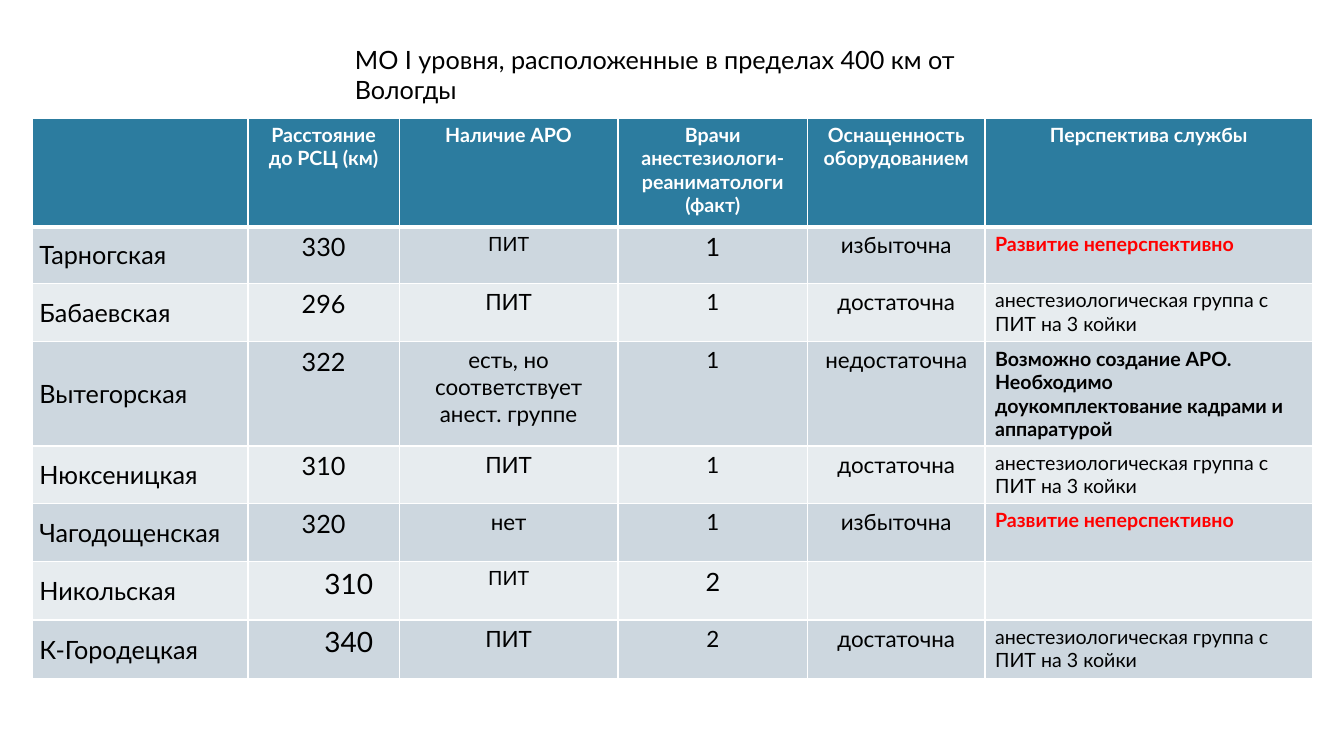
from dataclasses import dataclass

from lxml import etree
from pptx import Presentation
from pptx.dml.color import RGBColor
from pptx.enum.text import MSO_ANCHOR, MSO_AUTO_SIZE, PP_ALIGN
from pptx.oxml.ns import qn
from pptx.util import Inches, Pt

LEFT, CENTER = PP_ALIGN.LEFT, PP_ALIGN.CENTER
TOP, MIDDLE = MSO_ANCHOR.TOP, MSO_ANCHOR.MIDDLE
FIXED = MSO_AUTO_SIZE.NONE

TITLE = "МО I уровня, расположенные в пределах 400 км от Вологды"
HEADS = ["", "Расстояние до РСЦ (км)", "Наличие АРО",
         "Врачи анестезиологи-реаниматологи (факт)",
         "Оснащенность оборудованием", "Перспектива службы"]
GROUP = "анестезиологическая группа с ПИТ на 3 койки"
HOPELESS = "Развитие неперспективно"
UPGRADE = "Возможно создание АРО. Необходимо доукомплектование кадрами и аппаратурой"
ROWS = [
    ("Тарногская", "330", "ПИТ", "1", "избыточна", HOPELESS),
    ("Бабаевская", "296", "ПИТ", "1", "достаточна", GROUP),
    ("Вытегорская", "322", "есть, но соответствует анест. группе", "1",
     "недостаточна", UPGRADE),
    ("Нюксеницкая", "310", "ПИТ", "1", "достаточна", GROUP),
    ("Чагодощенская", "320", "нет", "1", "избыточна", HOPELESS),
    ("Никольская", "310", "ПИТ", "2", "", ""),
    ("К-Городецкая", "340", "ПИТ", "2", "достаточна", GROUP),
]
WIDTHS = [2.14, 1.5, 2.17, 1.88, 1.76, 3.25]
HEIGHTS = [1.08, 0.56, 0.58, 1.03, 0.56, 0.58, 0.58, 0.58]
SIZES = [18, 18, 16, 16, 16, 14]
SPECIAL = {(1, 2): 14, (1, 3): 18, (6, 2): 14, (6, 3): 18,
           (6, 1): 20, (7, 1): 20}
INDENTED = [(6, 1), (7, 1)]


@dataclass
class Theme:
    font: str = "Lato"
    head: str = "2C7C9F"
    bands: tuple = ("E7ECEF", "CDD7DF")
    white: str = "FFFFFF"
    ink: str = "000000"
    alert: str = "FF0000"
    title: int = 18
    label: int = 14
    rule: float = 0.96
    thick: float = 3


THEME = Theme()


def style(para, size, color, bold, align):
    para.alignment = align
    font = para.font
    font.name = THEME.font
    font.size = Pt(size)
    font.bold = bold
    font.color.rgb = RGBColor.from_string(color)


def border(cell, base):
    props = cell._tc.get_or_add_tcPr()
    for side in ("L", "R", "T", "B"):
        width = base if side == "B" else THEME.rule
        line = etree.SubElement(props, qn(f"a:ln{side}"), w=str(Pt(width)))
        fill = etree.SubElement(line, qn("a:solidFill"))
        etree.SubElement(fill, qn("a:srgbClr"), val=THEME.white)


def paint(cell, row, col, text):
    header = row == 0
    border(cell, THEME.thick if header else THEME.rule)
    cell.fill.solid()
    shade = THEME.head if header else THEME.bands[row % 2]
    cell.fill.fore_color.rgb = RGBColor.from_string(shade)
    cell.vertical_anchor = MIDDLE if col == 0 else TOP
    if col == 0 or (row, col) in INDENTED:
        cell.margin_left = cell.margin_right = Inches(0.07)
    cell.text = text
    para = cell.text_frame.paragraphs[0]
    if (row, col) in INDENTED:
        para._p.get_or_add_pPr().set("marL", str(Inches(0.5)))
    if header:
        style(para, THEME.label, THEME.white, True, CENTER)
    else:
        size = SPECIAL.get((row, col), SIZES[col])
        color = THEME.alert if text == HOPELESS else THEME.ink
        align = LEFT if col in (0, 5) else CENTER
        style(para, size, color, text in (HOPELESS, UPGRADE), align)


def main():
    deck = Presentation()
    deck.slide_width, deck.slide_height = Inches(13.33), Inches(7.5)
    slide = deck.slides.add_slide(deck.slide_layouts[5])

    title = slide.shapes.title
    title.left, title.top = Inches(3.42), Inches(0.39)
    title.width, title.height = Inches(7), Inches(0.7)
    title.text = TITLE
    frame = title.text_frame
    frame.word_wrap = True
    frame.auto_size = FIXED
    frame.vertical_anchor = TOP
    style(frame.paragraphs[0], THEME.title, THEME.ink, False, LEFT)

    grid = [HEADS, *ROWS]
    table = slide.shapes.add_table(
        len(grid), len(HEADS), Inches(0.32), Inches(1.17),
        Inches(sum(WIDTHS)), Inches(sum(HEIGHTS))).table
    for col, width in enumerate(WIDTHS):
        table.columns[col].width = Inches(width)
    for row, (height, texts) in enumerate(zip(HEIGHTS, grid)):
        table.rows[row].height = Inches(height)
        for col, text in enumerate(texts):
            paint(table.cell(row, col), row, col, text)

    deck.save("out.pptx")


if __name__ == "__main__":
    main()
